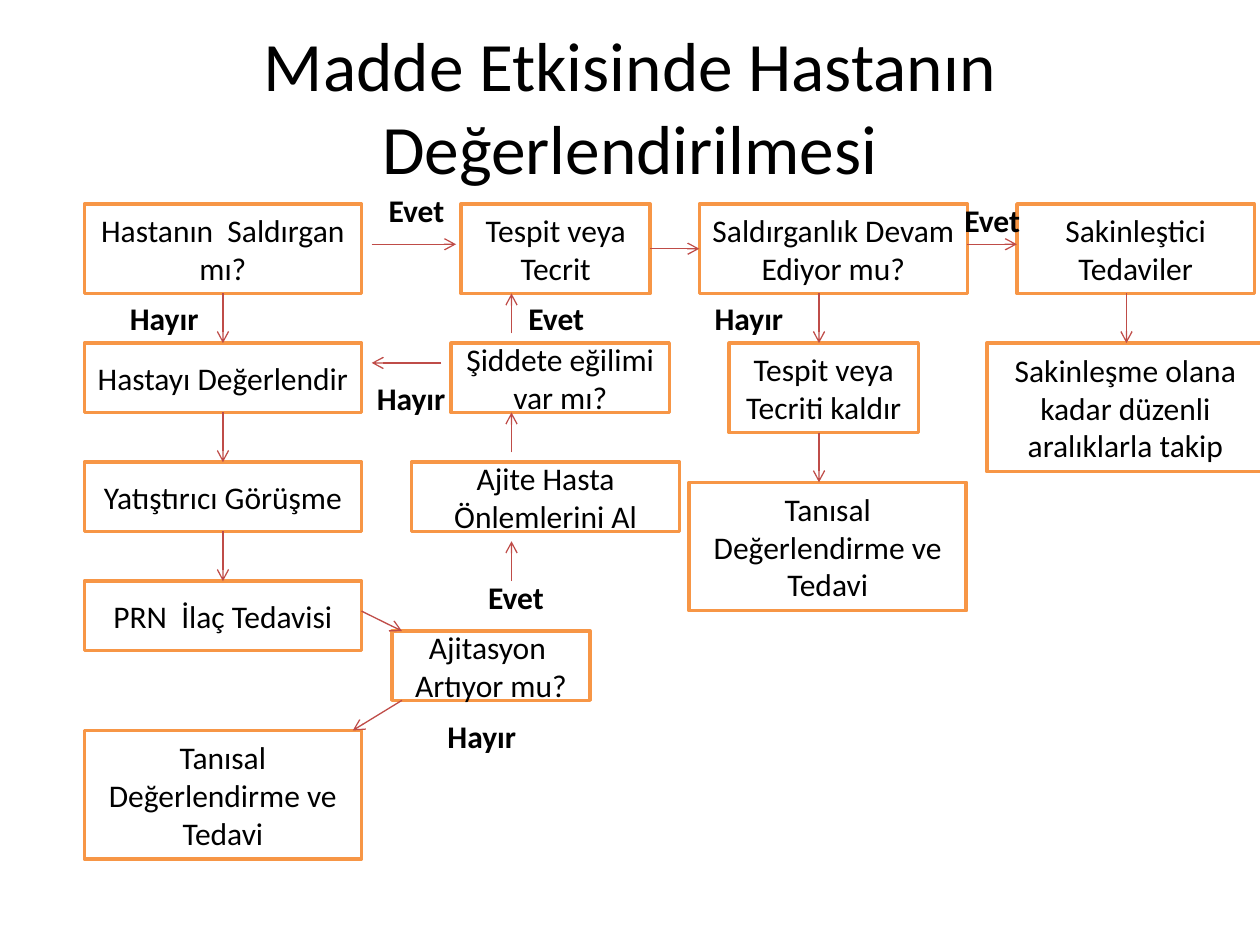
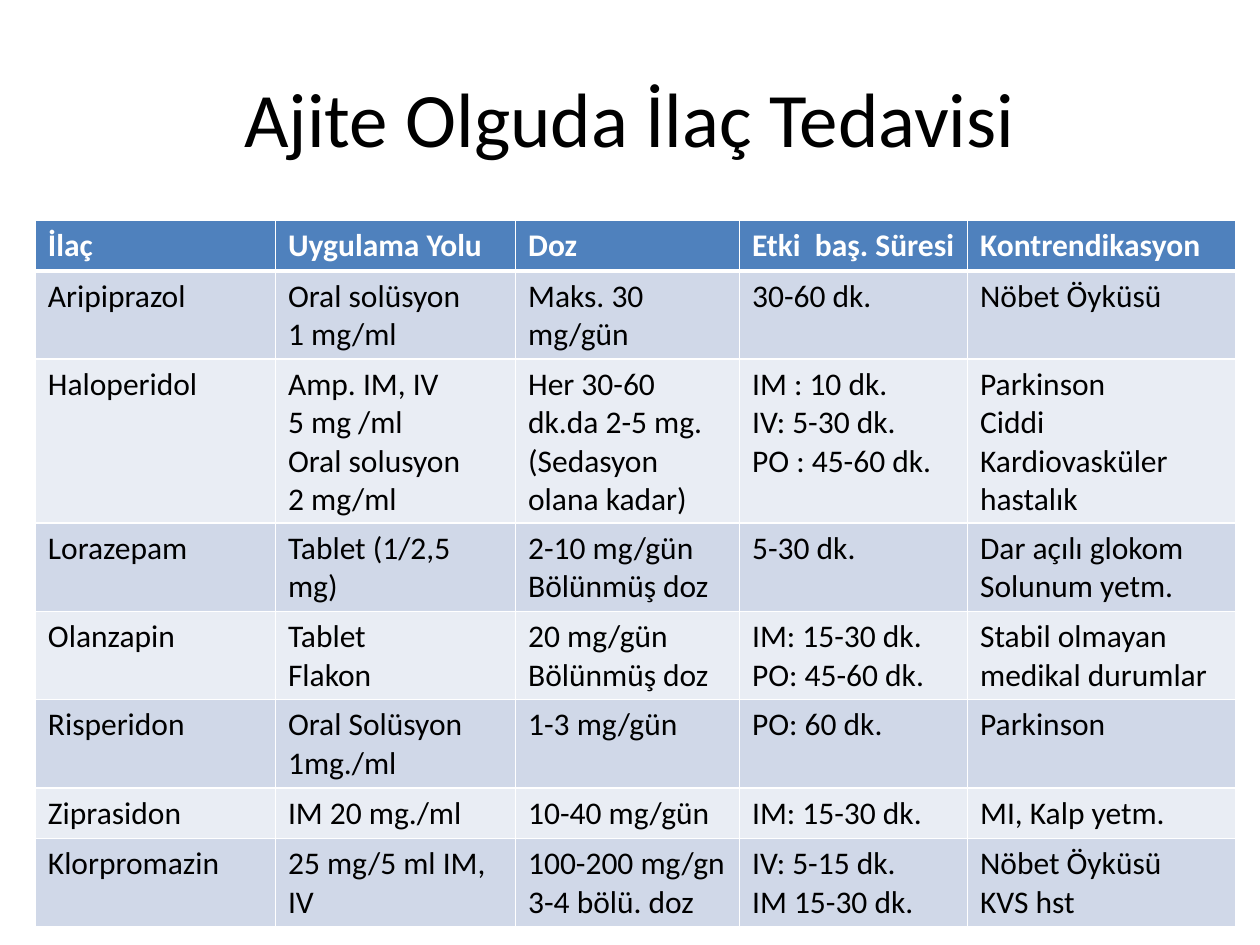
from dataclasses import dataclass

from lxml.etree import SubElement
from pptx import Presentation
from pptx.dml.color import RGBColor
from pptx.enum.shapes import MSO_CONNECTOR, MSO_SHAPE
from pptx.enum.text import MSO_ANCHOR, PP_ALIGN
from pptx.oxml.ns import qn
from pptx.shapes.autoshape import Shape
from pptx.shapes.connector import Connector
from pptx.slide import Slide
from pptx.table import _Cell
from pptx.text.text import TextFrame
from pptx.util import Pt


@dataclass(frozen=True)
class Theme:
    font: str = "Calibri"
    ink: str = "000000"
    paper: str = "FFFFFF"
    frame: str = "F79646"
    arrow: str = "BF4C48"
    head: str = "4F81BD"
    bands: tuple[str, str] = ("D0D8E8", "E9EDF4")
    body: float = 18
    title: float = 44
    small: float = 39.6


@dataclass(frozen=True)
class Box:
    key: str
    left: float
    top: float
    width: float
    height: float
    text: str


@dataclass(frozen=True)
class Link:
    start: str
    out: int
    end: str
    into: int


@dataclass(frozen=True)
class Arrow:
    x1: float
    y1: float
    x2: float
    y2: float


@dataclass(frozen=True)
class Label:
    text: str
    left: float
    top: float


THEME = Theme()
TOP, RIGHT, BOTTOM, LEFT = 0, 3, 2, 1
ONE, TWO, THREE = 39.6, 51.1, 73.4
GAP = 28.4
ROW1 = 116.6
ROW2 = ROW1 + TWO + GAP
ROW3 = ROW2 + ONE + GAP
ROW4 = ROW3 + ONE + GAP
LOW = ROW1 + TWO
SIDE = 48.2
WIDE = 158.4
RISE = 292.3
DROP = 468
CALM = 643.7
DIAG = "Tanısal Değerlendirme ve Tedavi"
YES, NO = "Evet", "Hayır"
SIZES = {YES: 51.1, NO: 56.7}

BOXES = [
    Box("attack", SIDE, ROW1, WIDE, TWO, "Hastanın  Saldırgan mı?"),
    Box("assess", SIDE, ROW2, WIDE, ONE, "Hastayı Değerlendir"),
    Box("talk", SIDE, ROW3, WIDE, ONE, "Yatıştırıcı Görüşme"),
    Box("drug", SIDE, ROW4, WIDE, ONE, "PRN  İlaç Tedavisi"),
    Box("treat", SIDE, 417.4, WIDE, THREE, DIAG),
    Box("worse", 223.9, 360.6, 113.3, ONE, "Ajitasyon \nArtıyor mu?"),
    Box("guard", 235.2, ROW3, 153.2, ONE, "Ajite Hasta Önlemlerini Al"),
    Box("threat", 257.8, ROW2, 124.7, ONE, "Şiddete eğilimi var mı?"),
    Box("hold", 263.5, ROW1, 108.1, TWO, "Tespit veya Tecrit"),
    Box("still", 399.6, ROW1, 153.2, TWO, "Saldırganlık Devam Ediyor mu?"),
    Box("free", 416.7, ROW2, 108.1, TWO, "Tespit veya Tecriti kaldır"),
    Box("cure", 393.8, ROW2 + TWO + GAP, WIDE, THREE, DIAG),
    Box("calm", 581.1, ROW1, 135.7, TWO, "Sakinleştici Tedaviler"),
    Box("watch", 563.9, ROW2, WIDE, THREE,
        "Sakinleşme olana kadar düzenli aralıklarla takip"),
]

LINKS = [
    Link("attack", BOTTOM, "assess", TOP),
    Link("assess", BOTTOM, "talk", TOP),
    Link("talk", BOTTOM, "drug", TOP),
    Link("hold", RIGHT, "still", LEFT),
]

ARROWS = [
    Arrow(212.4, 139.6, 260.6, 139.6),
    Arrow(552.8, 139.6, 581.1, 139.6),
    Arrow(252, 207.4, 212.4, 207.4),
    Arrow(206.6, 349.2, 229.7, 360.6),
    Arrow(229.7, 400.2, 201.6, 417.4),
    Arrow(RISE, LOW + 22.8, RISE, LOW),
    Arrow(RISE, ROW2 + ONE + 22.8, RISE, ROW2 + ONE),
    Arrow(RISE, ROW4, RISE, ROW4 - 22.8),
    Arrow(DROP, LOW, DROP, ROW2),
    Arrow(DROP, ROW2 + TWO, DROP, ROW2 + TWO + GAP),
    Arrow(CALM, LOW, CALM, ROW2),
]

LABELS = [
    Label(YES, 212.4, 105.8),
    Label(NO, 65.5, LOW),
    Label(YES, 269.3, 326.9),
    Label(NO, 247, 406.1),
    Label(YES, RISE, LOW),
    Label(NO, 206.6, 213.1),
    Label(NO, 399.6, LOW),
    Label(YES, 541.4, 111.6),
]

WIDTHS = [137.2, 137.2, 128, 130.3, 153.1]
LINES = [1, 2, 4, 2, 2, 2, 1, 2]
ROWS = [
    ["İlaç", "Uygulama Yolu", "Doz", "Etki  baş. Süresi", "Kontrendikasyon"],
    ["Aripiprazol", "Oral solüsyon\n1 mg/ml", "Maks. 30 mg/gün", "30-60 dk.",
     "Nöbet Öyküsü"],
    ["Haloperidol", "Amp. IM, IV\n5 mg /ml\nOral solusyon\n2 mg/ml",
     "Her 30-60 dk.da 2-5 mg.\n(Sedasyon olana kadar)",
     "IM : 10 dk.\nIV: 5-30 dk.\nPO : 45-60 dk.",
     "Parkinson\nCiddi Kardiovasküler hastalık"],
    ["Lorazepam", "Tablet (1/2,5 mg)", "2-10 mg/gün\nBölünmüş doz", "5-30 dk.",
     "Dar açılı glokom Solunum yetm."],
    ["Olanzapin", "Tablet\nFlakon", "20 mg/gün\nBölünmüş doz",
     "IM: 15-30 dk.\nPO: 45-60 dk.", "Stabil olmayan medikal durumlar"],
    ["Risperidon", "Oral Solüsyon 1mg./ml", "1-3 mg/gün", "PO: 60 dk.",
     "Parkinson"],
    ["Ziprasidon", "IM 20 mg./ml", "10-40 mg/gün", "IM: 15-30 dk.",
     "MI, Kalp yetm."],
    ["Klorpromazin", "25 mg/5 ml IM, IV", "100-200 mg/gn\n3-4 bölü. doz",
     "IV: 5-15 dk.\nIM 15-30 dk.", "Nöbet Öyküsü\nKVS hst"],
]


def tint(code: str) -> RGBColor:
    return RGBColor.from_string(code)


def write(frame: TextFrame, text: str, size: float = THEME.body,
          bold: bool = False, ink: str = THEME.ink,
          align: PP_ALIGN = PP_ALIGN.CENTER) -> None:
    frame.text = text
    for para in frame.paragraphs:
        para.alignment = align
        for run in para.runs:
            run.font.name = THEME.font
            run.font.size = Pt(size)
            run.font.bold = bold
            run.font.color.rgb = tint(ink)


def add_text(slide: Slide, text: str, left: float, top: float, width: float,
             height: float, size: float = THEME.body,
             bold: bool = False) -> None:
    shape = slide.shapes.add_textbox(Pt(left), Pt(top), Pt(width), Pt(height))
    frame = shape.text_frame
    frame.word_wrap = True
    frame.vertical_anchor = MSO_ANCHOR.MIDDLE
    write(frame, text, size, bold)


def add_title(slide: Slide, text: str, top: float, size: float) -> None:
    add_text(slide, text, 36, top, 648, 90, size)


def add_box(slide: Slide, box: Box) -> Shape:
    shape = slide.shapes.add_shape(
        MSO_SHAPE.RECTANGLE, Pt(box.left), Pt(box.top),
        Pt(box.width), Pt(box.height))
    shape.shadow.inherit = False
    shape.fill.solid()
    shape.fill.fore_color.rgb = tint(THEME.paper)
    shape.line.color.rgb = tint(THEME.frame)
    shape.line.width = Pt(2)
    shape.text_frame.word_wrap = True
    shape.text_frame.vertical_anchor = MSO_ANCHOR.MIDDLE
    write(shape.text_frame, box.text)
    return shape


def add_arrow(slide: Slide, arrow: Arrow) -> Connector:
    line = slide.shapes.add_connector(
        MSO_CONNECTOR.STRAIGHT, Pt(arrow.x1), Pt(arrow.y1),
        Pt(arrow.x2), Pt(arrow.y2))
    line.line.color.rgb = tint(THEME.arrow)
    line.line.width = Pt(0.75)
    props = line._element.spPr
    SubElement(props.find(qn("a:ln")), qn("a:tailEnd"), type="arrow")
    SubElement(props, qn("a:effectLst"))
    return line


def add_link(slide: Slide, link: Link, shapes: dict[str, Shape]) -> None:
    line = add_arrow(slide, Arrow(0, 0, 0, 0))
    line.begin_connect(shapes[link.start], link.out)
    line.end_connect(shapes[link.end], link.into)


def add_edges(cell: _Cell, row: int) -> None:
    props = cell._tc.get_or_add_tcPr()
    thick = {"lnB": 0, "lnT": 1}
    for side in ("lnL", "lnR", "lnT", "lnB"):
        width = 3 if thick.get(side) == row else 1
        edge = SubElement(props, qn(f"a:{side}"), w=str(Pt(width)))
        fill = SubElement(edge, qn("a:solidFill"))
        SubElement(fill, qn("a:srgbClr"), val=THEME.paper)


def add_grid(slide: Slide) -> None:
    highs = [7.2 + 21.6 * count for count in LINES]
    table = slide.shapes.add_table(
        len(ROWS), len(WIDTHS), Pt(20.2), Pt(126),
        Pt(sum(WIDTHS)), Pt(sum(highs))).table
    for col, width in zip(table.columns, WIDTHS):
        col.width = Pt(width)
    for row, (texts, high) in enumerate(zip(ROWS, highs)):
        table.rows[row].height = Pt(high)
        first = row == 0
        for col, text in enumerate(texts):
            cell = table.cell(row, col)
            add_edges(cell, row)
            cell.fill.solid()
            cell.fill.fore_color.rgb = tint(
                THEME.head if first else THEME.bands[(row - 1) % 2])
            write(cell.text_frame, text, bold=first,
                  ink=THEME.paper if first else THEME.ink,
                  align=PP_ALIGN.LEFT)


def draw_flow(slide: Slide) -> None:
    add_title(slide, "Madde Etkisinde Hastanın Değerlendirilmesi",
              15.1, THEME.small)
    shapes = {box.key: add_box(slide, box) for box in BOXES}
    for link in LINKS:
        add_link(slide, link, shapes)
    for arrow in ARROWS:
        add_arrow(slide, arrow)
    for label in LABELS:
        add_text(slide, label.text, label.left, label.top,
                 SIZES[label.text], GAP, bold=True)


def draw_drugs(slide: Slide) -> None:
    add_title(slide, "Ajite Olguda İlaç Tedavisi", 21.6, THEME.title)
    add_grid(slide)


def main() -> None:
    deck = Presentation()
    deck.slide_width, deck.slide_height = Pt(720), Pt(540)
    for draw in (draw_flow, draw_drugs):
        draw(deck.slides.add_slide(deck.slide_layouts[6]))
    deck.save("out.pptx")


if __name__ == "__main__":
    main()
